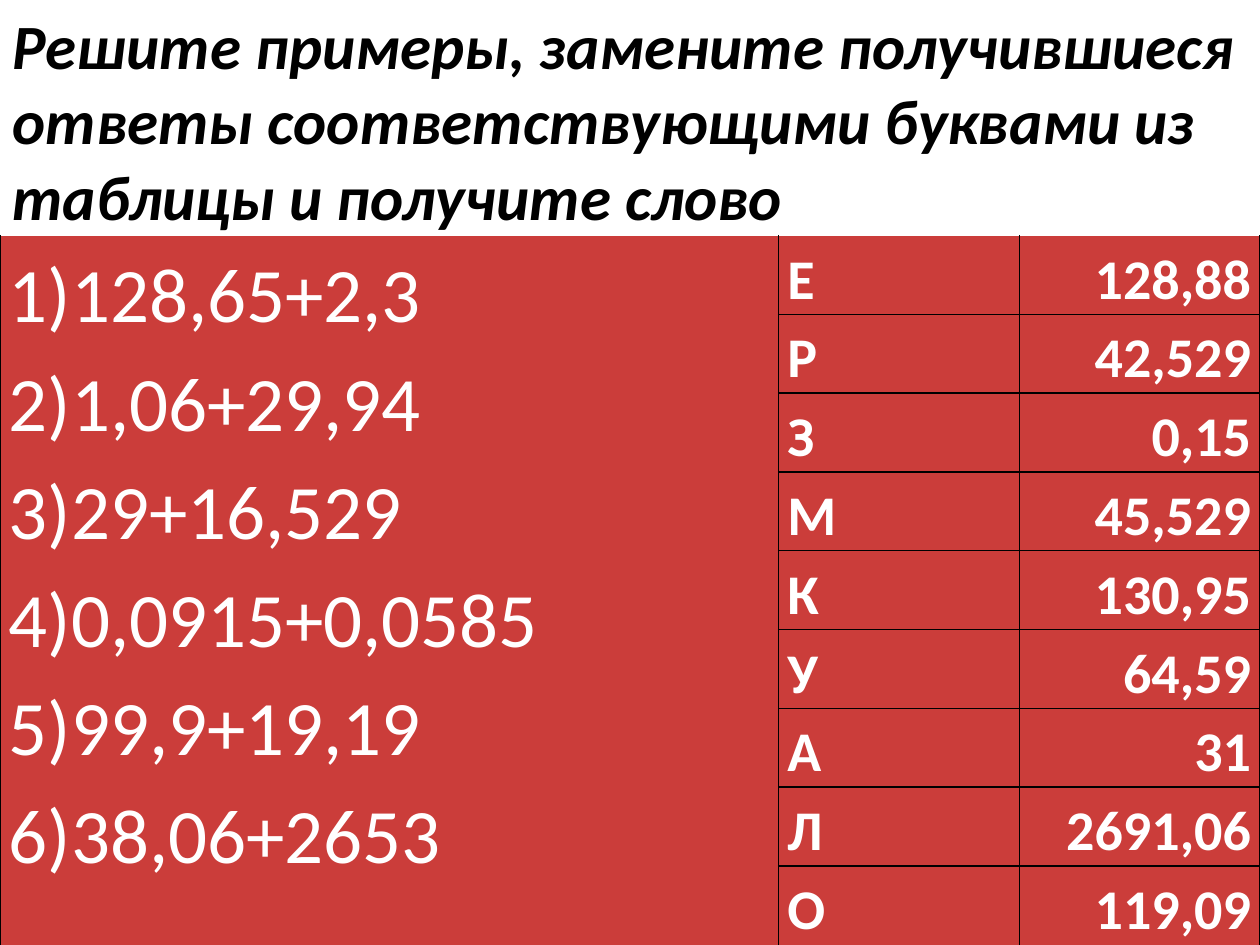
from lxml.etree import SubElement
from pptx import Presentation
from pptx.dml.color import RGBColor
from pptx.enum.text import MSO_AUTO_SIZE, PP_ALIGN
from pptx.oxml.ns import qn
from pptx.util import Inches, Pt

BLACK = RGBColor(0x00, 0x00, 0x00)
WHITE = RGBColor(0xFF, 0xFF, 0xFF)
RED = RGBColor(0xCB, 0x3D, 0x3A)

TITLE = ("Решите примеры, замените получившиеся ответы "
         "соответствующими буквами из таблицы и получите слово")
EXERCISES = ["1)128,65+2,3", "2)1,06+29,94", "3)29+16,529",
             "4)0,0915+0,0585", "5)99,9+19,19", "6)38,06+2653"]
ANSWERS = [("Е", "128,88"), ("Р", "42,529"), ("З", "0,15"),
           ("М", "45,529"), ("К", "130,95"), ("У", "64,59"),
           ("А", "31"), ("Л", "2691,06"), ("О", "119,09")]
COLUMN_WIDTHS = [6.18, 1.91, 1.91]
TABLE_TOP = 1.87
TABLE_HEIGHT = 5.63


def style_font(font, size, color, bold=False, italic=False):
    font.name = "Calibri"
    font.size = Pt(size)
    font.color.rgb = color
    font.bold = bold
    font.italic = italic


def add_title(slide):
    box = slide.shapes.add_textbox(0, 0, Inches(10), Inches(1.92))
    frame = box.text_frame
    frame.word_wrap = True
    frame.auto_size = MSO_AUTO_SIZE.SHAPE_TO_FIT_TEXT
    paragraph = frame.paragraphs[0]
    paragraph.text = TITLE
    style_font(paragraph.font, 36, BLACK, bold=True, italic=True)


def set_borders(cell, sides):
    properties = cell._tc.get_or_add_tcPr()
    for side in sides:
        line = SubElement(properties, qn(f"a:ln{side}"), w=str(Pt(1)))
        fill = SubElement(line, qn("a:solidFill"))
        SubElement(fill, qn("a:srgbClr"), val=str(BLACK))


def format_cell(cell, is_top):
    set_borders(cell, "LRB" if is_top else "LRTB")
    cell.fill.solid()
    cell.fill.fore_color.rgb = RED
    cell.margin_left = cell.margin_right = Inches(0.07)
    cell.margin_top = cell.margin_bottom = 0


def write_cell(cell, lines, size, bold, alignment):
    cell.text = "\n".join(lines)
    for paragraph in cell.text_frame.paragraphs:
        paragraph.alignment = alignment
        paragraph.line_spacing = 1.15
        style_font(paragraph.font, size, WHITE, bold)


def add_answer_table(slide):
    row_count = len(ANSWERS)
    frame = slide.shapes.add_table(
        row_count, len(COLUMN_WIDTHS), 0, Inches(TABLE_TOP),
        Inches(10), Inches(TABLE_HEIGHT))
    table = frame.table
    table.first_row = False
    table.horz_banding = False
    for column, width in zip(table.columns, COLUMN_WIDTHS):
        column.width = Inches(width)
    for row_index, row in enumerate(table.rows):
        row.height = Inches(TABLE_HEIGHT / row_count)
        for cell in row.cells:
            format_cell(cell, row_index == 0)
    table.cell(0, 0).merge(table.cell(row_count - 1, 0))
    write_cell(table.cell(0, 0), EXERCISES, 44, False, PP_ALIGN.JUSTIFY)
    for row_index, (letter, answer) in enumerate(ANSWERS):
        write_cell(table.cell(row_index, 1), [letter], 32, True, PP_ALIGN.JUSTIFY)
        write_cell(table.cell(row_index, 2), [answer], 32, True, PP_ALIGN.RIGHT)


def main():
    presentation = Presentation()
    presentation.slide_width = Inches(10)
    presentation.slide_height = Inches(7.5)
    slide = presentation.slides.add_slide(presentation.slide_layouts[6])
    add_title(slide)
    add_answer_table(slide)
    presentation.save("out.pptx")


if __name__ == "__main__":
    main()
